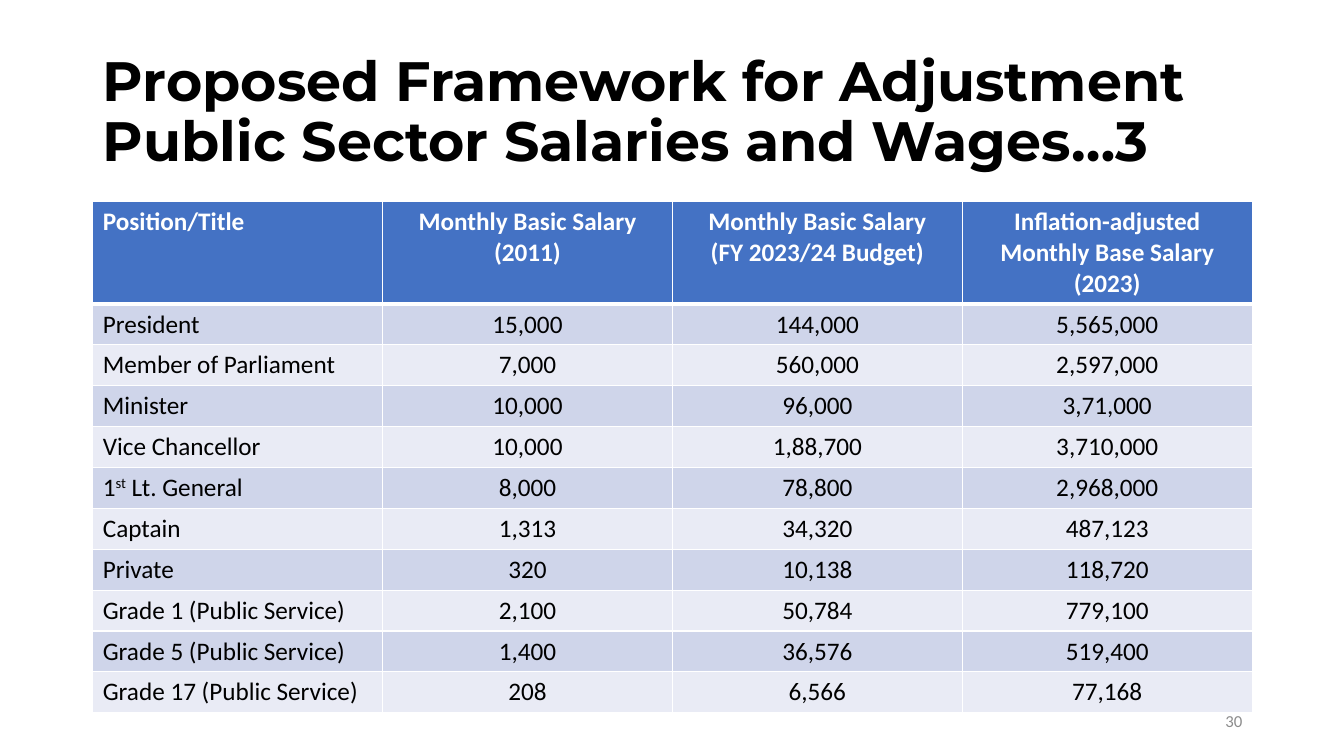
from lxml import etree
from pptx import Presentation
from pptx.dml.color import RGBColor
from pptx.enum.text import MSO_ANCHOR, MSO_AUTO_SIZE, PP_ALIGN
from pptx.oxml.ns import qn
from pptx.util import Inches, Pt

LEFT, CENTER, RIGHT = PP_ALIGN.LEFT, PP_ALIGN.CENTER, PP_ALIGN.RIGHT
MIDDLE = MSO_ANCHOR.MIDDLE
NO_AUTOFIT = MSO_AUTO_SIZE.NONE

BLACK, WHITE, GRAY = "000000", "FFFFFF", "8C8C8C"
HEADER_FILL = "4472C4"
BAND_FILLS = ("CFD5EA", "E9EBF5")
HEADER_HEIGHT, ROW_HEIGHT = 1.01, 0.405

TITLE = "Proposed Framework for Adjustment Public Sector Salaries and Wages…3"
HEADERS = [
    ["Position/Title"],
    ["Monthly Basic Salary", "(2011)"],
    ["Monthly Basic Salary", "(FY 2023/24 Budget)"],
    ["Inflation-adjusted Monthly Base Salary", "(2023)"],
]
SALARIES = [
    ("President", "15,000", "144,000", "5,565,000"),
    ("Member of Parliament", "7,000", "560,000", "2,597,000"),
    ("Minister", "10,000", "96,000", "3,71,000"),
    ("Vice Chancellor", "10,000", "1,88,700", "3,710,000"),
    (("1", "st", " Lt. General"), "8,000", "78,800", "2,968,000"),
    ("Captain", "1,313", "34,320", "487,123"),
    ("Private", "320", "10,138", "118,720"),
    ("Grade 1 (Public Service)", "2,100", "50,784", "779,100"),
    ("Grade 5 (Public Service)", "1,400", "36,576", "519,400"),
    ("Grade 17 (Public Service)", "208", "6,566", "77,168"),
]


def rgb(color):
    """Return the colour for a hex string."""
    return RGBColor.from_string(color)


def add_span(para, text, size=18, font="Calibri", color=BLACK, bold=False, raised=False):
    """Add one formatted run to a paragraph."""
    span = para.add_run()
    span.text = text
    span.font.size = Pt(size)
    span.font.name = font
    span.font.color.rgb = rgb(color)
    span.font.bold = bold
    if raised:
        span._r.get_or_add_rPr().set("baseline", "30000")


def write_lines(frame, lines, align=LEFT, **style):
    """Fill a text frame with one paragraph per line; a tuple has its middle part raised."""
    for index, line in enumerate(lines):
        para = frame.add_paragraph() if index else frame.paragraphs[0]
        para.alignment = align
        parts = line if isinstance(line, tuple) else (line,)
        for position, part in enumerate(parts):
            add_span(para, part, raised=position == 1, **style)


def set_borders(cell, **widths):
    """Draw white cell borders with the given widths in points."""
    properties = cell._tc.get_or_add_tcPr()
    for side, width in widths.items():
        line = etree.SubElement(properties, qn(f"a:ln{side}"), w=str(Pt(width)))
        fill = etree.SubElement(line, qn("a:solidFill"))
        etree.SubElement(fill, qn("a:srgbClr"), val=WHITE)


def fill_cell(cell, lines, fill, top=1, bottom=1, **style):
    """Write and colour one table cell."""
    write_lines(cell.text_frame, lines, **style)
    set_borders(cell, L=1, R=1, T=top, B=bottom)
    cell.fill.solid()
    cell.fill.fore_color.rgb = rgb(fill)


def add_title(page):
    """Place and format the slide title."""
    title = page.shapes.title
    title.left, title.top = Inches(0.92), Inches(0.4)
    title.width, title.height = Inches(11.5), Inches(1.45)
    frame = title.text_frame
    frame.auto_size = NO_AUTOFIT
    frame.word_wrap = True
    frame.vertical_anchor = MIDDLE
    write_lines(frame, [TITLE], size=39.6, font="Montserrat", bold=True)
    frame.paragraphs[0].line_spacing = 0.9


def add_salary_table(page):
    """Add the banded salary table."""
    height = HEADER_HEIGHT + ROW_HEIGHT * len(SALARIES)
    table = page.shapes.add_table(
        len(SALARIES) + 1, len(HEADERS),
        Inches(0.92), Inches(2), Inches(11.5), Inches(height),
    ).table
    for row in table.rows:
        row.height = Inches(ROW_HEIGHT)
    table.rows[0].height = Inches(HEADER_HEIGHT)
    for column, lines in enumerate(HEADERS):
        fill_cell(table.cell(0, column), lines, HEADER_FILL, bottom=3,
                  align=CENTER if column else LEFT, color=WHITE, bold=True)
    for index, values in enumerate(SALARIES):
        for column, value in enumerate(values):
            fill_cell(table.cell(index + 1, column), [value], BAND_FILLS[index % 2],
                      top=1 if index else 3, align=CENTER if column else LEFT)


def add_page_number(page):
    """Add the page number at the bottom right."""
    box = page.shapes.add_textbox(Inches(9.42), Inches(6.95), Inches(3), Inches(0.4))
    box.text_frame.word_wrap = True
    box.text_frame.vertical_anchor = MIDDLE
    write_lines(box.text_frame, ["30"], align=RIGHT, size=12, color=GRAY)


def main():
    """Build and save the slide."""
    deck = Presentation()
    deck.slide_width, deck.slide_height = Inches(13.33), Inches(7.5)
    page = deck.slides.add_slide(deck.slide_layouts[5])
    add_title(page)
    add_salary_table(page)
    add_page_number(page)
    deck.save("out.pptx")


if __name__ == "__main__":
    main()
